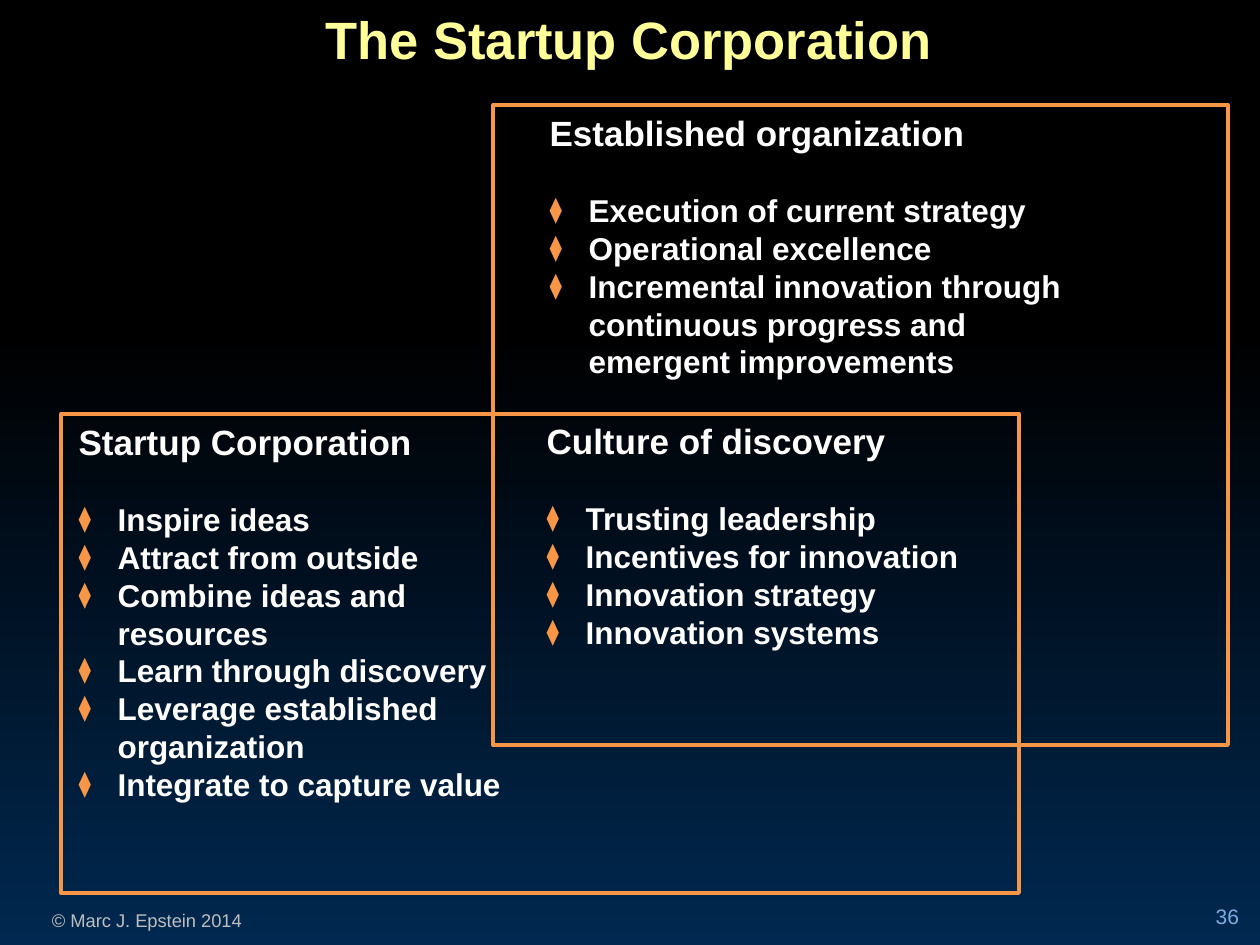
from dataclasses import dataclass
from typing import NamedTuple

from lxml import etree
from pptx import Presentation
from pptx import util as u
from pptx.dml.color import RGBColor
from pptx.enum import shapes, text
from pptx.oxml.ns import qn

EMU_PER_PX = 914400 / 126


@dataclass(frozen=True)
class Theme:
    font: str = "Arial"
    night: str = "000000"
    navy: str = "002850"
    yellow: str = "FFFF99"
    white: str = "FFFFFF"
    orange: str = "F79646"
    grey: str = "BFBFBF"
    blue: str = "81ABE0"
    title: float = 30
    heading: float = 20
    bullet: float = 18
    number: float = 12
    copyright: float = 10.5
    outline: float = 2.25
    leading: float = 1.2


class Box(NamedTuple):
    left: int
    top: int
    width: int
    height: int


class Topic(NamedTuple):
    box: Box
    heading: str
    points: list[str]


THEME = Theme()
BULLET_INDENT = 39

FRAMES = [Box(61, 414, 958, 479), Box(493, 105, 735, 640)]
TOPICS = [
    Topic(Box(537, 105, 556, 285), "Established organization", [
        "Execution of current strategy",
        "Operational excellence",
        "Incremental innovation through continuous progress and emergent improvements",
    ]),
    Topic(Box(66, 414, 466, 398), "Startup Corporation", [
        "Inspire ideas",
        "Attract from outside",
        "Combine ideas and resources",
        "Learn through discovery",
        "Leverage established organization",
        "Integrate to capture value",
    ]),
    Topic(Box(534, 413, 484, 246), "Culture of discovery", [
        "Trusting leadership",
        "Incentives for innovation",
        "Innovation strategy",
        "Innovation systems",
    ]),
]


def px(length: int) -> u.Emu:
    return u.Emu(round(length * EMU_PER_PX))


def rgb(color: str) -> RGBColor:
    return RGBColor.from_string(color)


def place(shape, box: Box) -> None:
    shape.left, shape.top, shape.width, shape.height = map(px, box)


def prepare_frame(shape, anchor=text.MSO_ANCHOR.TOP, side_margin: float = 0.1):
    frame = shape.text_frame
    frame.word_wrap = True
    frame.auto_size = text.MSO_AUTO_SIZE.NONE
    frame.vertical_anchor = anchor
    frame.margin_left = frame.margin_right = u.Inches(side_margin)
    frame.margin_top = frame.margin_bottom = u.Inches(0.05)
    return frame


def set_bullet(paragraph, bulleted: bool) -> None:
    """Give the paragraph an orange diamond, or switch off the inherited bullet."""
    properties = paragraph._p.get_or_add_pPr()
    indent = px(BULLET_INDENT) if bulleted else 0
    properties.set("marL", str(indent))
    properties.set("indent", str(-indent))
    if not bulleted:
        etree.SubElement(properties, qn("a:buNone"))
        return
    color = etree.SubElement(properties, qn("a:buClr"))
    etree.SubElement(color, qn("a:srgbClr"), val=THEME.orange)
    etree.SubElement(properties, qn("a:buSzPct"), val="80000")
    etree.SubElement(properties, qn("a:buFont"), typeface=THEME.font)
    etree.SubElement(properties, qn("a:buChar"), char="⧫")


def write(paragraph, words: str, *, size: float, color: str, bold: bool = False,
          align=text.PP_ALIGN.LEFT, bulleted: bool = False, before: float = 0) -> None:
    set_bullet(paragraph, bulleted)
    paragraph.alignment = align
    paragraph.line_spacing = u.Pt(size * THEME.leading)
    paragraph.space_before = u.Pt(before)
    paragraph.space_after = u.Pt(0)
    run = paragraph.add_run()
    run.text = words
    run.font.name = THEME.font
    run.font.size = u.Pt(size)
    run.font.bold = bold
    run.font.color.rgb = rgb(color)


def paint_background(slide) -> None:
    fill = slide.background.fill
    fill.gradient()
    fill.gradient_angle = 270
    stops = [(0.35, THEME.night), (1, THEME.navy)]
    for stop, (position, color) in zip(fill.gradient_stops, stops):
        stop.position = position
        stop.color.rgb = rgb(color)


def draw_frame(slide, box: Box) -> None:
    frame = slide.shapes.add_shape(shapes.MSO_SHAPE.RECTANGLE, *map(px, box))
    frame.shadow.inherit = False
    frame.fill.background()
    frame.line.color.rgb = rgb(THEME.orange)
    frame.line.width = u.Pt(THEME.outline)


def fill_topic(placeholder, topic: Topic) -> None:
    place(placeholder, topic.box)
    frame = prepare_frame(placeholder)
    write(frame.paragraphs[0], topic.heading, size=THEME.heading,
          color=THEME.white, bold=True)
    for index, point in enumerate(topic.points):
        gap = THEME.bullet * THEME.leading if index == 0 else 0
        write(frame.add_paragraph(), point, size=THEME.bullet, color=THEME.white,
              bold=True, bulleted=True, before=gap)


def main() -> None:
    deck = Presentation()
    deck.slide_width, deck.slide_height = u.Inches(10), u.Inches(7.5)
    comparison_layout = deck.slide_layouts[4]
    slide = deck.slides.add_slide(comparison_layout)
    paint_background(slide)

    title, *bodies = slide.placeholders
    place(title, Box(-1, 1, 1260, 77))
    write(prepare_frame(title).paragraphs[0], "The Startup Corporation",
          size=THEME.title, color=THEME.yellow, bold=True,
          align=text.PP_ALIGN.CENTER)

    for frame_box in FRAMES:
        draw_frame(slide, frame_box)
    for body, topic in zip(bodies, TOPICS):
        fill_topic(body, topic)
    for unused in bodies[len(TOPICS):]:
        unused.element.getparent().remove(unused.element)

    copyright_line = slide.shapes.add_textbox(*map(px, Box(-21, 903, 336, 35)))
    write(prepare_frame(copyright_line).paragraphs[0], "© Marc J. Epstein 2014",
          size=THEME.copyright, color=THEME.grey, align=text.PP_ALIGN.CENTER)

    page_number = slide.shapes.add_textbox(*map(px, Box(1134, 885, 105, 50)))
    number_frame = prepare_frame(page_number, text.MSO_ANCHOR.BOTTOM, side_margin=0)
    write(number_frame.paragraphs[0], "36", size=THEME.number, color=THEME.blue,
          align=text.PP_ALIGN.RIGHT)

    deck.save("out.pptx")


if __name__ == "__main__":
    main()
